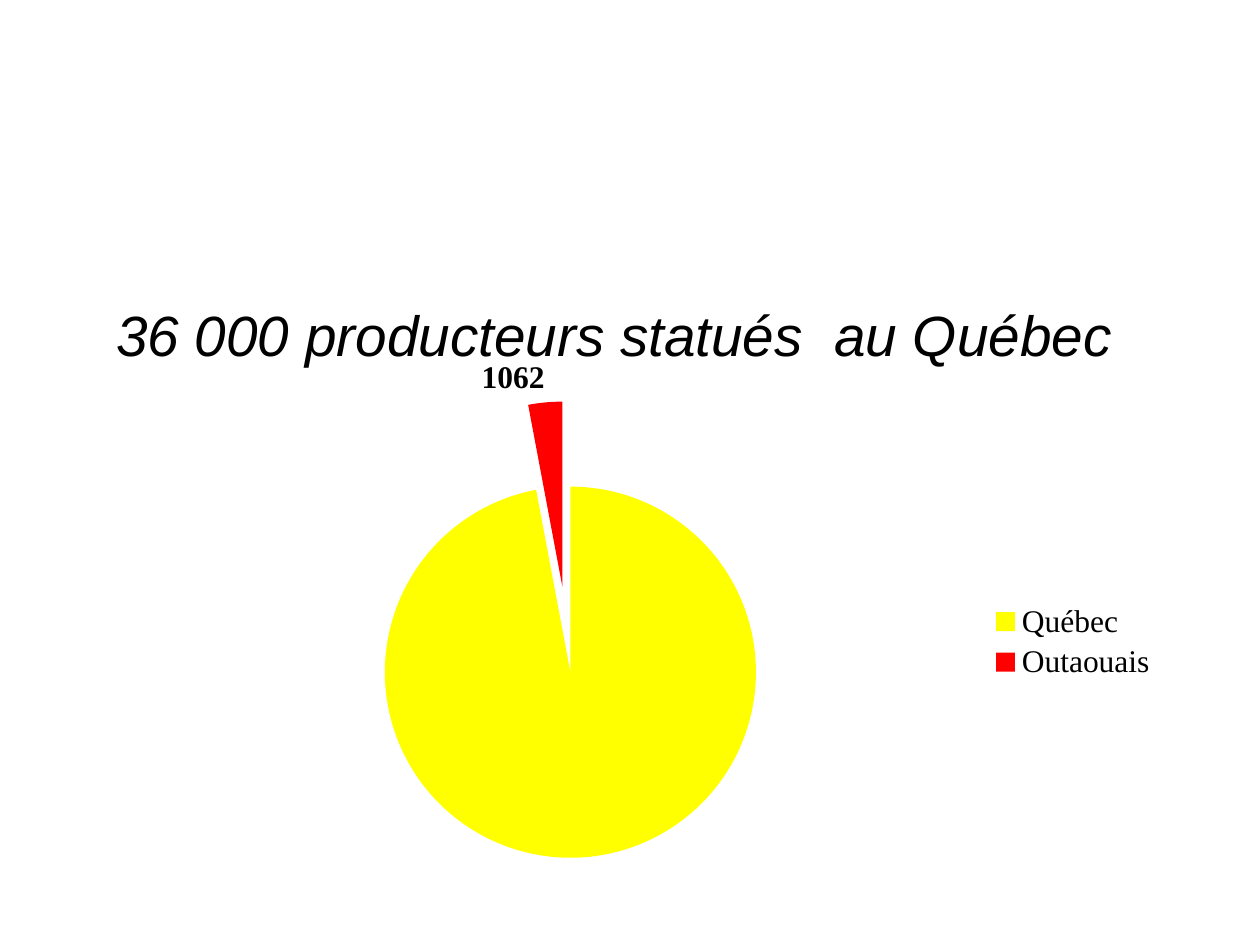
from lxml import etree
from pptx import Presentation
from pptx.chart.data import CategoryChartData
from pptx.dml.color import RGBColor
from pptx.enum.chart import XL_CHART_TYPE as ChartType, XL_LABEL_POSITION as LabelPos
from pptx.enum.chart import XL_LEGEND_POSITION as LegendPos
from pptx.enum.text import MSO_ANCHOR as Anchor, PP_ALIGN as Align
from pptx.oxml import parse_xml
from pptx.oxml.ns import nsdecls, qn
from pptx.util import Inches, Pt

COLORS = {"text": "000000", "shadow": "808080", "quebec": "FFFF00", "outaouais": "FF0000"}

prs = Presentation()
prs.slide_width, prs.slide_height = Inches(10), Inches(7.5)
slide = prs.slides.add_slide(prs.slide_layouts[5])

heading = slide.shapes.title
heading.left, heading.top = Inches(0.75), Inches(1.75)
heading.width, heading.height = Inches(8.5), Inches(1.25)
frame = heading.text_frame
frame.word_wrap = True
frame.vertical_anchor = Anchor.BOTTOM
frame.margin_bottom = Inches(0.08)
frame.paragraphs[0].alignment = Align.CENTER
producers = frame.paragraphs[0].add_run()
producers.text = "36 000 producteurs statués  au Québec  "
producers.font.size = Pt(32.4)
producers.font.italic = True
producers.font.color.rgb = RGBColor.from_string(COLORS["text"])
producers.font.name = "Arial"
fill = producers.font._element.find(qn("a:solidFill"))
fill.addnext(parse_xml(
    f'<a:effectLst {nsdecls("a")}><a:outerShdw dist="35921" dir="2700000">'
    f'<a:srgbClr val="{COLORS["shadow"]}"/></a:outerShdw></a:effectLst>'))

counts = CategoryChartData()
counts.categories = ["Québec ", "Outaouais"]
counts.add_series("Series 1", (34800, 1062))
chart = slide.shapes.add_chart(
    ChartType.PIE, Inches(0.79), Inches(2.85), Inches(8.5), Inches(4.49), counts).chart
chart.has_title = False
chart.font.name = "Times New Roman"
chart.font.size = Pt(18)
chart.font.color.rgb = RGBColor.from_string(COLORS["text"])
chart.has_legend = True
chart.legend.position = LegendPos.RIGHT
chart.legend.include_in_layout = False

pie = chart.plots[0]
pie.vary_by_categories = True
regions = pie.series[0]
for index, region in enumerate(("quebec", "outaouais")):
    slice_format = regions.points[index].format
    slice_format.fill.solid()
    slice_format.fill.fore_color.rgb = RGBColor.from_string(COLORS[region])
    slice_format.line.fill.background()

labels = regions.data_labels
labels.show_value = True
labels.show_percentage = False
labels.position = LabelPos.OUTSIDE_END
labels.font.bold = True
labels.font.size = Pt(18)
labels.font.name = "Times New Roman"
labels.font.color.rgb = RGBColor.from_string(COLORS["text"])
labels._element.insert(0, parse_xml(
    f'<c:dLbl {nsdecls("c")}><c:idx val="0"/><c:delete val="1"/></c:dLbl>'))
regions._element.find(qn("c:dPt")).addprevious(
    parse_xml(f'<c:explosion {nsdecls("c")} val="23"/>'))

plot_area = chart._chartSpace.chart.plotArea
for old_layout in plot_area.findall(qn("c:layout")):
    plot_area.remove(old_layout)
layout = parse_xml(f'<c:layout {nsdecls("c")}><c:manualLayout/></c:layout>')
for tag, value in (("layoutTarget", "inner"), ("xMode", "edge"), ("yMode", "edge"),
                   ("x", "0.09"), ("y", "0.075"), ("w", "0.692"), ("h", "0.807")):
    etree.SubElement(layout[0], qn(f"c:{tag}")).set("val", value)
plot_area.insert(0, layout)

prs.save("out.pptx")
